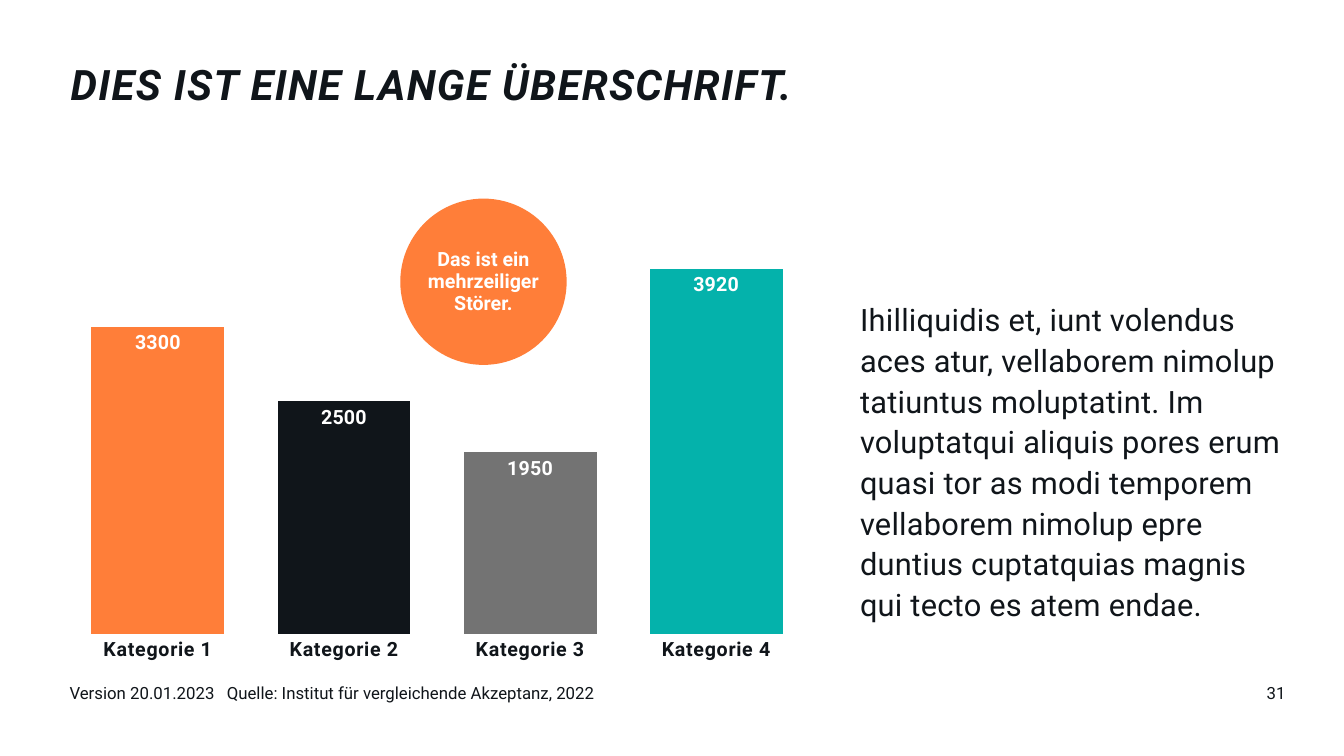
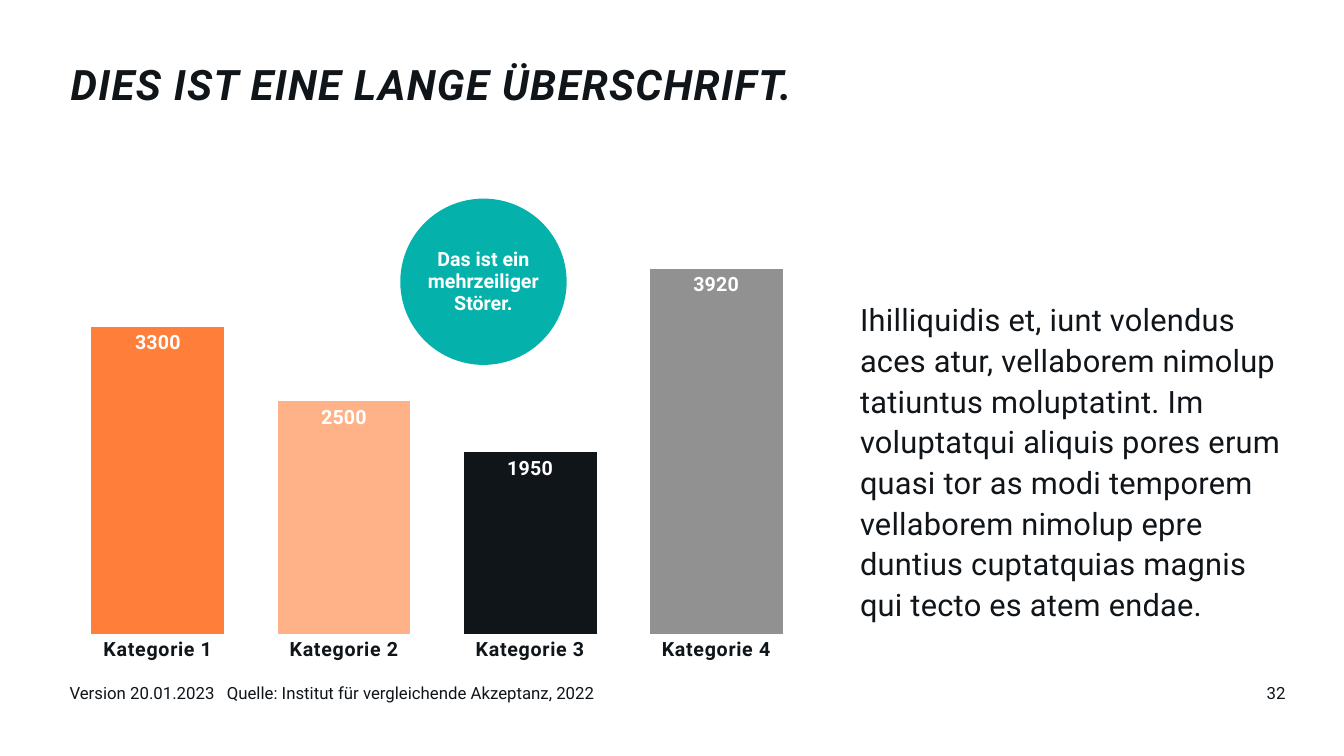
from dataclasses import dataclass

from lxml import etree
from pptx import Presentation
from pptx.chart.data import CategoryChartData
from pptx.dml.color import RGBColor
from pptx.enum.chart import XL_CHART_TYPE as Chart, XL_LABEL_POSITION as LabelPos
from pptx.enum.chart import XL_TICK_MARK as Tick
from pptx.enum.shapes import MSO_SHAPE as Shape
from pptx.enum.text import MSO_ANCHOR as Anchor, PP_ALIGN as Align
from pptx.oxml.ns import qn
from pptx.util import Inches, Pt

# Shared colours and font
FONT = "Roboto"
INK, WHITE = "10151A", "FFFFFF"
ORANGE, PEACH, TEAL = "FF7E39", "FFB288", "04B2AB"
GREY, LIGHT_GREY = "737373", "919191"

# Shared wording and values
TITLE = "DIES IST EINE LANGE ÜBERSCHRIFT."
FOOTER = "Version 20.01.2023\tQuelle: Institut für vergleichende Akzeptanz, 2022"
BODY = ("Ihilliquidis et, iunt volendus aces atur, vellaborem nimolup tatiuntus "
        "moluptatint. Im voluptatqui aliquis pores erum quasi tor as modi temporem "
        "vellaborem nimolup epre duntius cuptatquias magnis\vqui tecto es atem endae.")
BADGE = "Das ist ein mehrzeiliger Störer."
VALUES = {"Kategorie 1": 3300, "Kategorie 2": 2500,
          "Kategorie 3": 1950, "Kategorie 4": 3920}
AXIS_MAX = 4500


@dataclass(frozen=True)
class Box:
    left: float
    top: float
    width: float
    height: float

    def lengths(self) -> list:
        return [Inches(v) for v in (self.left, self.top, self.width, self.height)]


@dataclass(frozen=True)
class TextStyle:
    size: float
    color: str = INK
    bold: bool = False
    italic: bool = False
    tracking: float = 0
    line_spacing: float = 1.0
    align: Align = Align.LEFT
    anchor: Anchor = Anchor.TOP


@dataclass(frozen=True)
class ChartSlide:
    number: int
    bar_colors: tuple
    badge_color: str


TITLE_STYLE = TextStyle(30, bold=True, italic=True, tracking=1, line_spacing=0.85)
BODY_STYLE = TextStyle(22, tracking=0.2, line_spacing=1.1)
BADGE_STYLE = TextStyle(14, WHITE, bold=True, line_spacing=0.95,
                        align=Align.CENTER, anchor=Anchor.MIDDLE)
FOOTER_STYLE = TextStyle(12)
NUMBER_STYLE = TextStyle(12, align=Align.RIGHT)
CATEGORY_STYLE = TextStyle(14, bold=True, tracking=0.4)
VALUE_STYLE = TextStyle(14, WHITE, bold=True)

SLIDES = (
    ChartSlide(31, (ORANGE, INK, GREY, TEAL), ORANGE),
    ChartSlide(32, (ORANGE, PEACH, INK, LIGHT_GREY), TEAL),
)


def rgb(color: str) -> RGBColor:
    return RGBColor.from_string(color)


def set_attrs(target, values: dict) -> None:
    for name, value in values.items():
        setattr(target, name, value)


def fill(target, color: str) -> None:
    target.fill.solid()
    target.fill.fore_color.rgb = rgb(color)


def style_font(font, style: TextStyle) -> None:
    set_attrs(font, {"name": FONT, "size": Pt(style.size),
                     "bold": style.bold, "italic": style.italic})
    font.color.rgb = rgb(style.color)
    if style.tracking:
        font._rPr.set("spc", str(round(style.tracking * 100)))


def write(sp, text: str, style: TextStyle):
    tf = sp.text_frame
    set_attrs(tf, {"word_wrap": True, "vertical_anchor": style.anchor,
                   "margin_left": 0, "margin_right": 0,
                   "margin_top": 0, "margin_bottom": 0})
    p = tf.paragraphs[0]
    p.text = text
    set_attrs(p, {"alignment": style.align, "line_spacing": style.line_spacing})
    for r in p.runs:
        style_font(r.font, style)
    return p


def add_text(s, box: Box, text: str, style: TextStyle):
    return write(s.shapes.add_textbox(*box.lengths()), text, style)


def add_tab_stop(p, position: float) -> None:
    tabs = etree.SubElement(p._p.get_or_add_pPr(), qn("a:tabLst"))
    etree.SubElement(tabs, qn("a:tab"), pos=str(Inches(position)), algn="l")


def add_badge(s, box: Box, text: str, color: str) -> None:
    sp = s.shapes.add_shape(Shape.OVAL, *box.lengths())
    sp.shadow.inherit = False
    fill(sp, color)
    sp.line.fill.background()
    write(sp, text, BADGE_STYLE)


def fix_plot_area(chart, **fractions: float) -> None:
    """Place the inner plot area by fractions of the chart size."""
    area = chart._chartSpace.chart.plotArea
    for old in area.findall(qn("c:layout")):
        area.remove(old)
    layout = etree.Element(qn("c:layout"))
    area.insert(0, layout)
    manual = etree.SubElement(layout, qn("c:manualLayout"))
    settings = {"layoutTarget": "inner", "xMode": "edge", "yMode": "edge", **fractions}
    for name, value in settings.items():
        etree.SubElement(manual, qn(f"c:{name}"), val=str(value))


def add_column_chart(s, box: Box, colors: tuple) -> None:
    data = CategoryChartData()
    data.categories = list(VALUES)
    data.add_series("Series 1", list(VALUES.values()))
    chart = s.shapes.add_chart(Chart.COLUMN_CLUSTERED, *box.lengths(), data).chart
    set_attrs(chart, {"has_legend": False, "has_title": False})
    style_font(chart.font, TextStyle(10))
    fix_plot_area(chart, x=0.02, y=0.02, w=0.96, h=0.9)

    # Axes
    set_attrs(chart.value_axis, {"minimum_scale": 0, "maximum_scale": AXIS_MAX,
                                 "has_major_gridlines": False, "visible": False})
    axis = chart.category_axis
    set_attrs(axis, {"major_tick_mark": Tick.NONE, "minor_tick_mark": Tick.NONE})
    axis.format.line.fill.background()
    style_font(axis.tick_labels.font, CATEGORY_STYLE)

    # Bars and their values
    plot = chart.plots[0]
    set_attrs(plot, {"gap_width": 40, "overlap": 100, "vary_by_categories": False})
    series = plot.series[0]
    fill(series.format, INK)
    for i, color in enumerate(colors):
        fill(series.points[i].format, color)
    labels = series.data_labels
    set_attrs(labels, {"show_value": True, "position": LabelPos.INSIDE_END})
    style_font(labels.font, VALUE_STYLE)


def build_slide(prs, content: ChartSlide) -> None:
    s = prs.slides.add_slide(prs.slide_layouts[6])
    add_column_chart(s, Box(0.49, 2.04, 7.69, 4.62), content.bar_colors)

    # Footer
    add_text(s, Box(10.6, 6.77, 2.15, 0.4), str(content.number), NUMBER_STYLE)
    p = add_text(s, Box(0.69, 6.77, 8.23, 0.4), FOOTER, FOOTER_STYLE)
    add_tab_stop(p, 1.56)

    # Title, body text and badge
    add_text(s, Box(0.7, 0.66, 8.2, 1.12), TITLE, TITLE_STYLE)
    add_text(s, Box(8.53, 2.95, 4.21, 3.49), BODY, BODY_STYLE)
    add_badge(s, Box(3.97, 1.97, 1.65, 1.65), BADGE, content.badge_color)


def main() -> None:
    prs = Presentation()
    set_attrs(prs, {"slide_width": Inches(13.33), "slide_height": Inches(7.5)})
    for content in SLIDES:
        build_slide(prs, content)
    prs.save("out.pptx")


if __name__ == "__main__":
    main()
